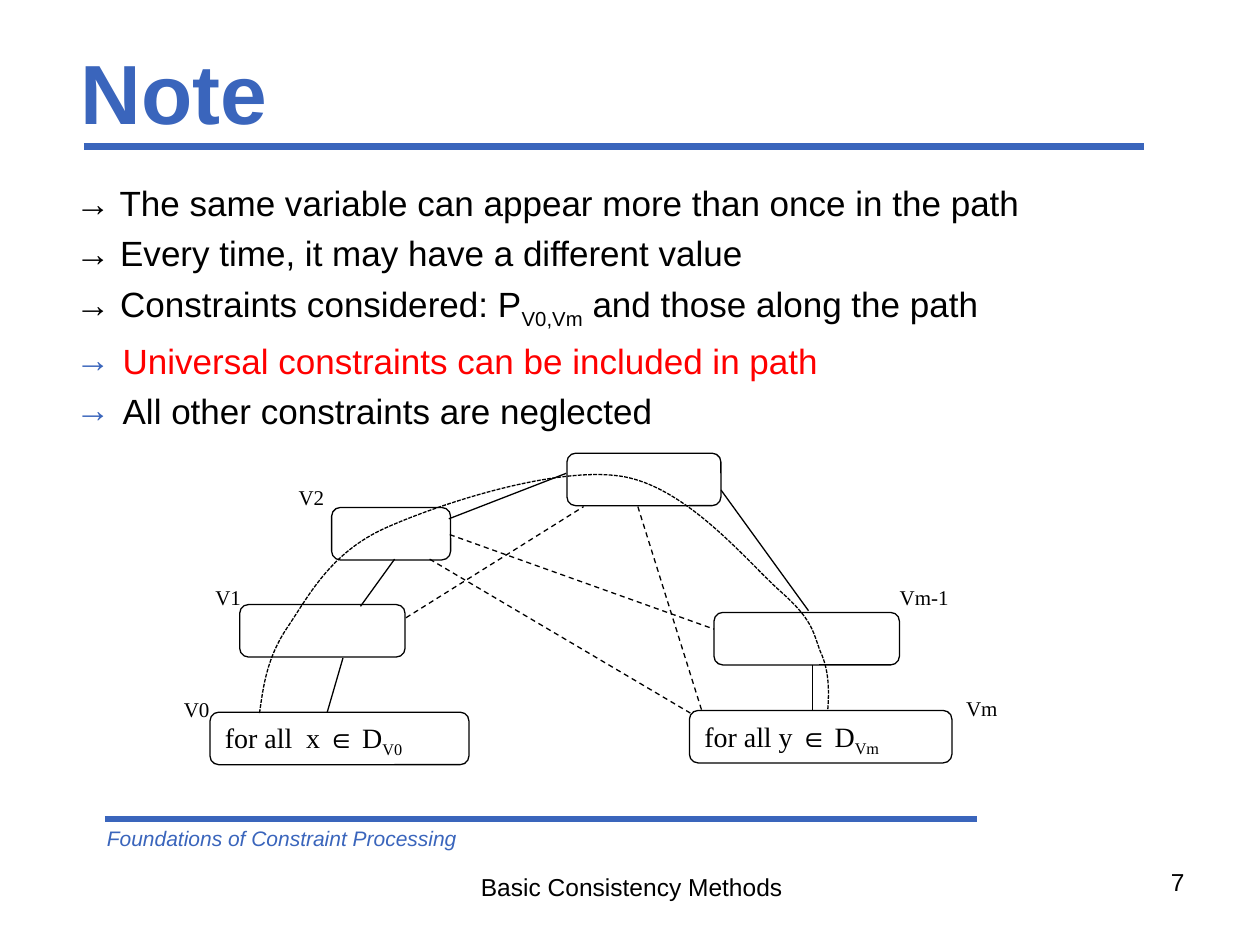
from lxml import etree
from pptx import Presentation
from pptx.dml.color import RGBColor
from pptx.enum.dml import MSO_LINE
from pptx.enum.shapes import MSO_CONNECTOR, MSO_SHAPE
from pptx.enum.text import MSO_ANCHOR, MSO_AUTO_SIZE, PP_ALIGN
from pptx.oxml.ns import qn
from pptx.util import Pt

BLUE = RGBColor(0x3A, 0x65, 0xBC)
RED = RGBColor(0xFF, 0, 0)
BLACK = RGBColor(0, 0, 0)
WHITE = RGBColor(0xFF, 0xFF, 0xFF)
LEFT, CENTER, RIGHT = PP_ALIGN.LEFT, PP_ALIGN.CENTER, PP_ALIGN.RIGHT
MIDDLE, TOP = MSO_ANCHOR.MIDDLE, MSO_ANCHOR.TOP
STRAIGHT = MSO_CONNECTOR.STRAIGHT
ROUNDED = MSO_SHAPE.ROUNDED_RECTANGLE
DASH, DOT = MSO_LINE.DASH, MSO_LINE.SQUARE_DOT
FIXED = MSO_AUTO_SIZE.NONE
TITLE_ONLY = 5

SANS, SERIF = "Arial", "Times New Roman"
TITLE = {"name": SANS, "size": Pt(48), "bold": True, "color": BLUE}
BODY = {"name": SANS, "size": Pt(20), "color": BLACK}
WARNING = {**BODY, "color": RED}
COURSE = {"name": SANS, "size": Pt(12), "italic": True, "color": BLUE}
FOOTER = {"name": SANS, "size": Pt(14), "color": BLACK}
DOMAIN = {"name": SERIF, "size": Pt(16), "color": BLACK}
SYMBOL = {**DOMAIN, "name": SANS}
SUBSCRIPT = {"baseline": "-25000"}
LABEL = {"name": SERIF, "size": Pt(12), "color": BLACK}

NODE_HEIGHT = 30
NODES = [
    (24, 155, 148, [("for all  x ", DOMAIN), ("∈", SYMBOL), (" D", DOMAIN),
                    ("V0", {**DOMAIN, **SUBSCRIPT})]),
    (41, 93.5, 94.5, []),
    (228, 7, 88, []),
    (312, 98, 106, []),
    (298, 154, 150, [("for all y ", DOMAIN), ("∈", SYMBOL), (" D", DOMAIN),
                     ("Vm", {**DOMAIN, **SUBSCRIPT})]),
    (93.5, 38, 68, []),
]
LABELS = [("V0", 2, 142.5), ("V1", 20, 78.5), ("V2", 67.5, 21.5),
          ("Vm-1", 411, 78.5), ("Vm", 449, 142)]
PATH_EDGES = [(91, 155, 100, 124), (110, 94.5, 129.5, 67.5),
              (160.5, 44.5, 227.5, 18.5), (316, 28, 366, 97),
              (368.5, 128, 368.5, 153.5)]
OTHER_EDGES = [(136, 101, 237.5, 37.5), (161, 53.5, 312, 107.5),
               (149.5, 67.5, 298.5, 155.5), (268.5, 37.5, 305, 154)]
PATH_CURVE = [(52.3, 155.5),
              (54.5, 139.7), (56.6, 123.8), (68.2, 106.6),
              (80.4, 88.6), (92.6, 64), (124.3, 49.7),
              (156.7, 35.3), (221.5, 14.4), (259, 20.2),
              (296.4, 26), (331, 69), (349.7, 85.7),
              (368.4, 102.2), (368.4, 108.7), (372.7, 120.2),
              (377.8, 131), (377.8, 142.6), (377, 154)]


def add_run(paragraph, text, style):
    """Append a run and apply its format values."""
    run = paragraph.add_run()
    run.text = text
    for key, value in style.items():
        if key == "color":
            run.font.color.rgb = value
        elif key == "baseline":
            run._r.get_or_add_rPr().set(key, value)
        else:
            setattr(run.font, key, value)


def write(frame, runs, align=LEFT, anchor=TOP):
    """Write one paragraph into a wrapped text frame."""
    values = {"word_wrap": True, "auto_size": FIXED, "vertical_anchor": anchor}
    for key, value in values.items():
        setattr(frame, key, value)
    paragraph = frame.paragraphs[0]
    paragraph.alignment = align
    for text, style in runs:
        add_run(paragraph, text, style)


def add_text(shapes, box, runs, align=LEFT):
    """Add a text box of one paragraph."""
    textbox = shapes.add_textbox(*map(Pt, box))
    write(textbox.text_frame, runs, align)
    return textbox


def add_line(shapes, ends, color=BLACK, width=0.75, dash=None):
    """Add a straight line without shadow."""
    line = shapes.add_connector(STRAIGHT, *map(Pt, ends))
    line.line.color.rgb = color
    line.line.width = Pt(width)
    line.line.dash_style = dash
    etree.SubElement(line._element.spPr, qn("a:effectLst"))


def place_title(slide, left, top, width, height):
    """Place the heading and the rule below it."""
    title = slide.shapes.title
    bounds = {"left": left, "top": top, "width": width, "height": height}
    for key, value in bounds.items():
        setattr(title, key, Pt(value))
    write(title.text_frame, [("Note", TITLE)], anchor=MIDDLE)
    rule = top + height - 4
    add_line(slide.shapes, (left + 9, rule, left + 615, rule), BLUE, 4)


def place_points(slide, left, top, width, height):
    """Place the list of remarks with hanging arrows."""
    points = [
        [("→ The same variable can appear more than once in the path", BODY)],
        [("→ Every time, it may have a different value", BODY)],
        [("→ Constraints considered: P", BODY), ("V0,Vm", {**BODY, **SUBSCRIPT}),
         (" and those along the path", BODY)],
        [("Universal constraints can be included in path", WARNING)],
        [("All other constraints are neglected", BODY)],
    ]
    frame = add_text(slide.shapes, (left, top, width, height), points[0]).text_frame
    for runs in points[1:]:
        paragraph = frame.add_paragraph()
        paragraph.space_before = Pt(5)
        for text, style in runs:
            add_run(paragraph, text, style)
    for paragraph, runs in zip(frame.paragraphs, points):
        properties = paragraph._p.get_or_add_pPr()
        properties.set("marL", str(Pt(27)))
        properties.set("indent", str(-Pt(27)))
        if not runs[0][0].startswith("→"):
            color = etree.SubElement(properties, qn("a:buClr"))
            etree.SubElement(color, qn("a:srgbClr"), val=str(BLUE))
            etree.SubElement(properties, qn("a:buFont"), typeface=SANS)
            etree.SubElement(properties, qn("a:buChar"), char="→")


def add_curve(shapes, points):
    """Draw a dotted Bezier curve through triples of control points."""
    start, *controls = [(Pt(x), Pt(y)) for x, y in points]
    builder = shapes.build_freeform(*start)
    builder.add_line_segments(controls, close=False)
    curve = builder.convert_to_shape()
    segments = list(curve._element.iter(qn("a:lnTo")))
    for index in range(0, len(segments), 3):
        bezier = etree.Element(qn("a:cubicBezTo"))
        segments[index].addprevious(bezier)
        for segment in segments[index:index + 3]:
            bezier.append(segment[0])
            segment.getparent().remove(segment)
    curve.shadow.inherit = False
    curve.fill.background()
    curve.line.color.rgb = BLACK
    curve.line.width = Pt(0.75)
    curve.line.dash_style = DOT


def place_path_diagram(slide, left, top):
    """Place the constraint path with its nodes, labels and edges."""
    shapes = slide.shapes.add_group_shape().shapes
    for x, y, width, runs in NODES:
        box = (left + x, top + y, width, NODE_HEIGHT)
        node = shapes.add_shape(ROUNDED, *map(Pt, box))
        node.shadow.inherit = False
        node.fill.solid()
        node.fill.fore_color.rgb = WHITE
        node.line.color.rgb = BLACK
        node.line.width = Pt(0.75)
        if runs:
            write(node.text_frame, runs)
    for text, x, y in LABELS:
        add_text(shapes, (left + x, top + y, 54, 36), [(text, LABEL)])
    for edges, dash in ((PATH_EDGES, None), (OTHER_EDGES, DASH)):
        for x1, y1, x2, y2 in edges:
            add_line(shapes, (left + x1, top + y1, left + x2, top + y2), dash=dash)
    add_curve(shapes, [(left + x, top + y) for x, y in PATH_CURVE])


def place_footer(slide, left, top):
    """Place the lower rule, course, lecture and page number."""
    shapes = slide.shapes
    add_line(shapes, (left + 6, top, left + 504, top), BLUE, 4)
    add_text(shapes, (left, top, 378, 22),
             [("Foundations of Constraint Processing", COURSE)])
    add_text(shapes, (left + 205, top + 26.5, 204, 24),
             [("Basic Consistency Methods", FOOTER)], CENTER)
    add_text(shapes, (left + 462, top + 24, 168, 37), [("7", FOOTER)], RIGHT)


def main():
    """Build and save the slide."""
    deck = Presentation()
    deck.slide_width, deck.slide_height = Pt(720), Pt(540)
    slide = deck.slides.add_slide(deck.slide_layouts[TITLE_ONLY])
    place_title(slide, 39, 16, 604, 72)
    place_points(slide, 36, 100, 648, 356)
    place_path_diagram(slide, 96, 252)
    place_footer(slide, 54, 468)
    deck.save("out.pptx")


if __name__ == "__main__":
    main()
